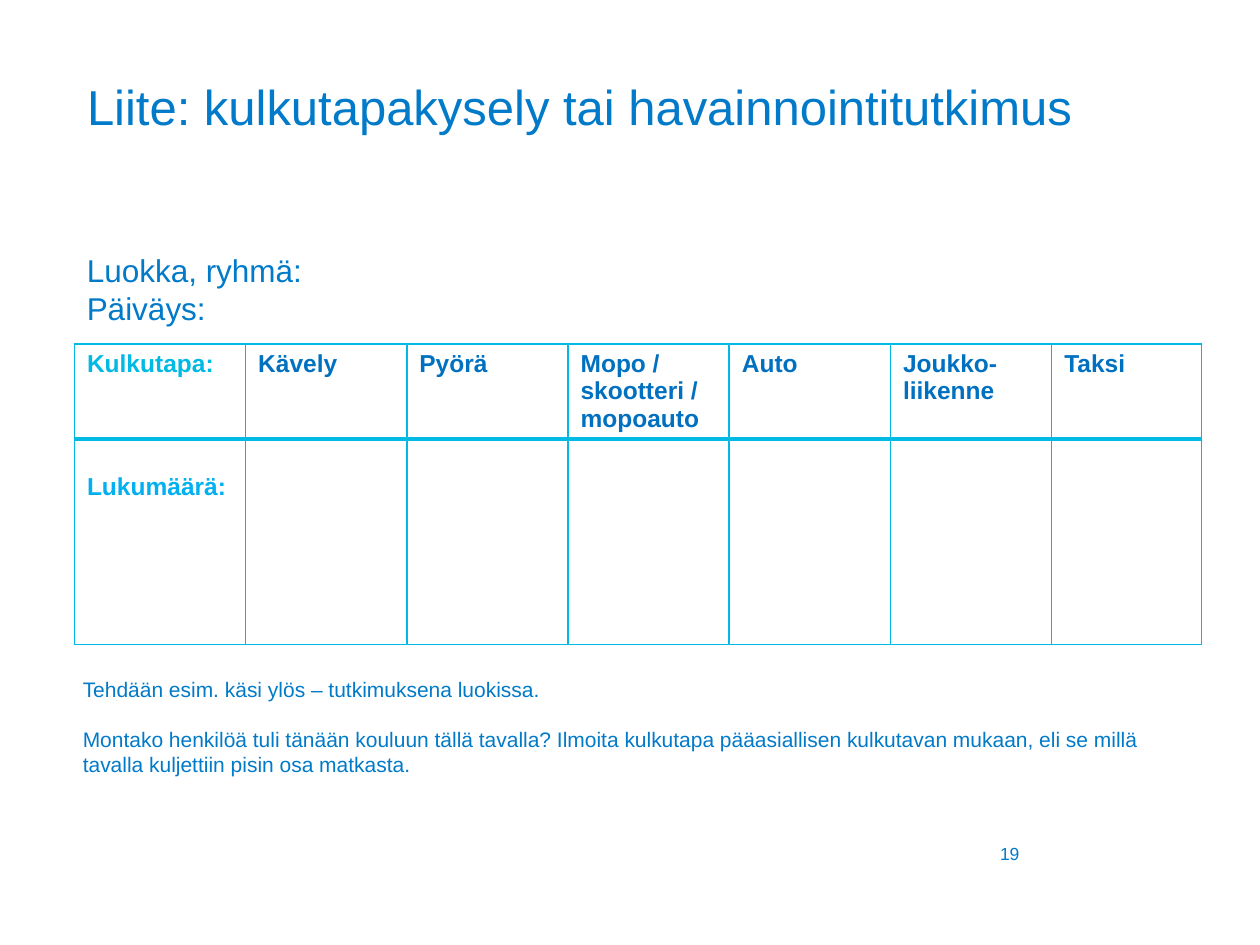
from dataclasses import dataclass
from typing import Any

from lxml.etree import SubElement as Sub
from pptx import Presentation
from pptx.dml.color import RGBColor as Rgb
from pptx.enum.text import MSO_ANCHOR as Anchor
from pptx.oxml.ns import qn
from pptx.util import Cm, Pt

INK = {"text": "007AC9", "head": "0070C0", "line": "00B9E4", "count": "00B0F0"}
FONT = "Arial"


@dataclass
class Note:
    lines: list[str]
    left: float
    top: float
    width: float
    height: float
    size: float
    gap: float = 0
    wrap: bool = True
    pitch: float = 1.0


NOTES = [
    Note(
        [
            "Tehdään esim. käsi ylös – tutkimuksena luokissa.",
            "Montako henkilöä tuli tänään kouluun tällä tavalla? Ilmoita kulkutapa "
            "pääasiallisen kulkutavan mukaan, eli se millä tavalla kuljettiin "
            "pisin osa matkasta.",
        ],
        1.42, 13.51, 22.4, 3.07, 12, gap=14,
    ),
    Note(["Luokka, ryhmä:", "Päiväys:"], 1.5, 4.93, 4.9, 1.8, 18, wrap=False),
    Note(["19"], 19.91, 16.92, 1.4, 0.58, 10, pitch=0.9),
]

HEADS = [
    "Kulkutapa:", "Kävely", "Pyörä", "Mopo / skootteri / mopoauto",
    "Auto", "Joukko-liikenne", "Taksi",
]
COUNTS = ["Lukumäärä:"] + [""] * (len(HEADS) - 1)
WIDTHS = [3.45] + [3.25] * 5 + [3.02]
HEIGHTS = [1.9, 4.14]


def style(para: Any, size: float, ink: str, bold: bool = False) -> None:
    font = para.font
    font.name, font.size, font.bold = FONT, Pt(size), bold
    font.color.rgb = Rgb.from_string(INK[ink])


def place(shape: Any, left: float, top: float, width: float, height: float) -> None:
    shape.left, shape.top = Cm(left), Cm(top)
    shape.width, shape.height = Cm(width), Cm(height)


def add_title(slide: Any, text: str) -> None:
    title = slide.shapes.title
    place(title, 1.5, 0.71, 22.38, 3)
    frame = title.text_frame
    frame.text = text
    frame.word_wrap = True
    frame.vertical_anchor = Anchor.MIDDLE
    para = frame.paragraphs[0]
    para.alignment = 1
    para.line_spacing = 0.9
    style(para, 28, "text")


def add_note(slide: Any, note: Note) -> None:
    box = slide.shapes.add_textbox(
        Cm(note.left), Cm(note.top), Cm(note.width), Cm(note.height)
    )
    frame = box.text_frame
    frame.word_wrap = note.wrap
    frame.text = "\n".join(note.lines)
    for i, para in enumerate(frame.paragraphs):
        para.line_spacing = note.pitch
        if i and note.gap:
            para.space_before = Pt(note.gap)
        style(para, note.size, "text")


def edge(cell: Any, side: str, width: float) -> None:
    props = cell._tc.get_or_add_tcPr()
    line = Sub(props, qn(f"a:ln{side}"), w=str(Pt(width)))
    fill = Sub(line, qn("a:solidFill"))
    Sub(fill, qn("a:srgbClr"), val=INK["line"])


def add_grid(slide: Any) -> None:
    rows = [HEADS, COUNTS]
    grid = slide.shapes.add_table(
        len(rows), len(HEADS), Cm(1.5), Cm(6.93), Cm(sum(WIDTHS)), Cm(sum(HEIGHTS))
    ).table
    grid.first_row = grid.horz_banding = False
    for col, width in zip(grid.columns, WIDTHS):
        col.width = Cm(width)
    for r, (row, words) in enumerate(zip(grid.rows, rows)):
        row.height = Cm(HEIGHTS[r])
        thick = {"T": 3 if r else 1, "B": 1 if r else 3}
        for c, (cell, word) in enumerate(zip(row.cells, words)):
            cell.text = word
            ink = "count" if r else "head" if c else "line"
            style(cell.text_frame.paragraphs[0], 14, ink, True)
            if r:
                cell.margin_top = Cm(0.69)
            for side in "LRTB":
                edge(cell, side, thick.get(side, 1))
            cell.fill.background()


def main() -> None:
    deck = Presentation()
    deck.slide_width, deck.slide_height = Cm(25.4), Cm(19.05)
    slide = deck.slides.add_slide(deck.slide_layouts[5])
    add_title(slide, "Liite: kulkutapakysely tai havainnointitutkimus")
    add_grid(slide)
    for note in NOTES:
        add_note(slide, note)
    deck.save("out.pptx")


if __name__ == "__main__":
    main()
